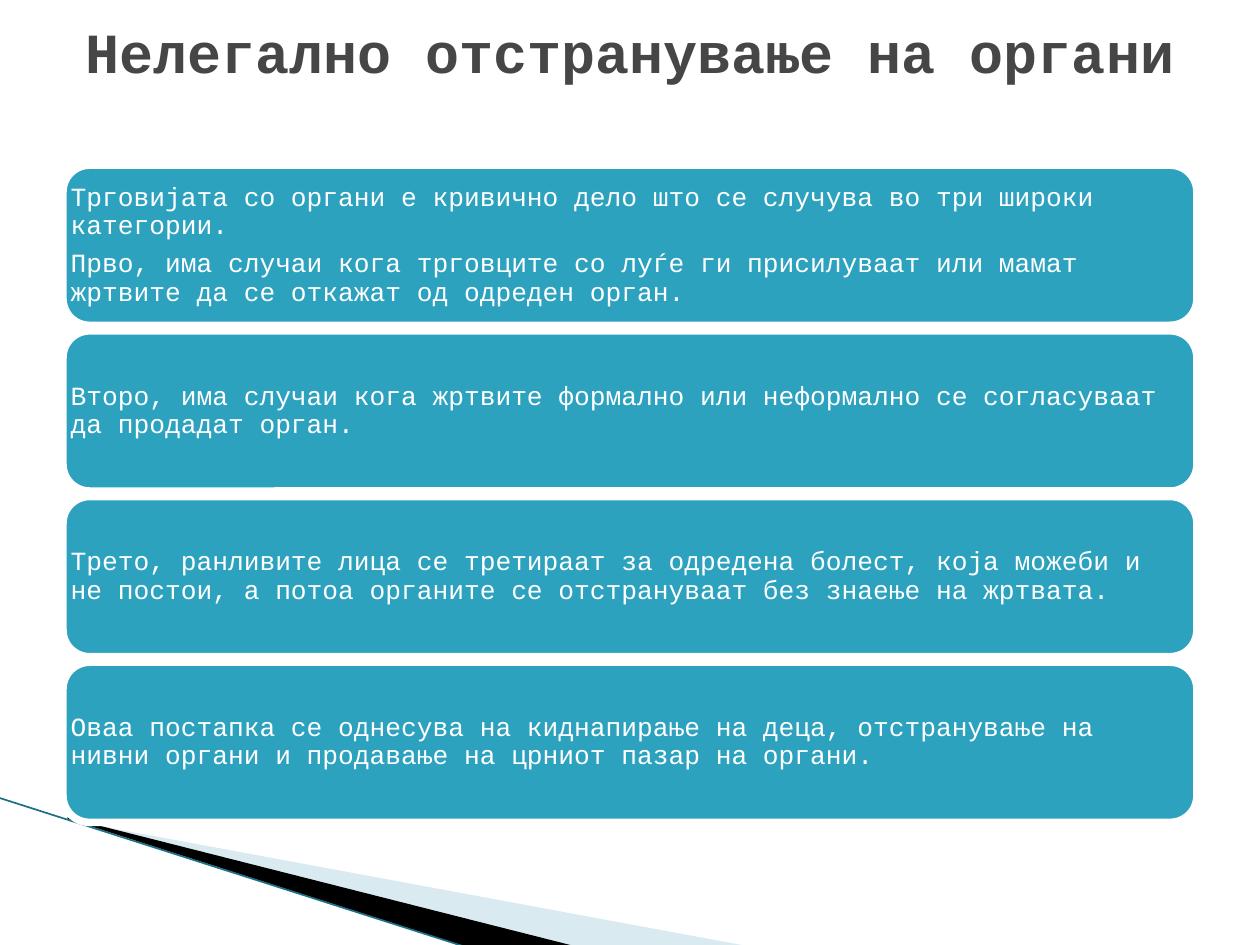
from lxml import etree
from pptx import Presentation
from pptx.dml.color import RGBColor
from pptx.enum.shapes import MSO_CONNECTOR, MSO_SHAPE
from pptx.enum.text import MSO_ANCHOR, PP_ALIGN
from pptx.oxml.ns import qn
from pptx.util import Cm, Pt

STRAIGHT = MSO_CONNECTOR.STRAIGHT
ROUNDED = MSO_SHAPE.ROUNDED_RECTANGLE
MIDDLE = MSO_ANCHOR.MIDDLE
CENTER = PP_ALIGN.CENTER
LEFT = PP_ALIGN.LEFT

COLORS = {
    "title": "464646",
    "card": "2DA2BF",
    "white": "FFFFFF",
    "light wedge": "A0CBDC",
    "dark wedge": "000000",
    "edge": "1C6F85",
}
FONT = "Courier New"

TITLE = "Нелегално отстранување на органи"
CARDS = [
    [
        "Трговијата со органи е кривично дело што се случува во три широки категории.",
        "Прво, има случаи кога трговците со луѓе ги присилуваат или мамат жртвите да се откажат од одреден орган.",
    ],
    ["Второ, има случаи кога жртвите формално или неформално се согласуваат да продадат орган."],
    [
        "Трето, ранливите лица се третираат за одредена болест, која можеби и не постои, "
        "а потоа органите се отстрануваат без знаење на жртвата."
    ],
    [
        "Оваа постапка се однесува на киднапирање на деца, отстранување на нивни органи "
        "и продавање на црниот пазар на органи."
    ],
]
WEDGES = [
    ("light wedge", 40, [(1.4, 16.54), (15.11, 19.08), (11.58, 19.08), (1.4, 16.51)]),
    ("dark wedge", 100, [(1.35, 16.48), (11.61, 19.08), (9.45, 19.1), (1.37, 16.51)]),
]
EDGE = (-0.03, 16.08, 9.42, 19.1)

MARGIN, CONTENT_WIDTH = 1.27, 22.86
TITLE_TOP, TITLE_HEIGHT = 0.25, 1.57
CARDS_TOP, CARD_HEIGHT, CARD_PITCH = 3.33, 3.23, 3.34

TITLE_FONT = {"name": FONT, "size": Pt(32.4), "bold": True}
CARD_FONT = {"name": FONT, "size": Pt(15), "bold": False}
TITLE_PARAGRAPH = {"alignment": CENTER}
CARD_PARAGRAPH = {"alignment": LEFT, "line_spacing": 0.9, "space_after": Pt(5.5)}
FRAME = {"word_wrap": True, "vertical_anchor": MIDDLE}
NO_INSETS = {"margin_left": 0, "margin_right": 0, "margin_top": 0, "margin_bottom": 0}


def color(name):
    return RGBColor.from_string(COLORS[name])


def apply(target, values):
    for name, value in values.items():
        setattr(target, name, value)


def fill_shape(shape, name):
    shape.shadow.inherit = False
    shape.fill.solid()
    shape.fill.fore_color.rgb = color(name)


def write(frame, texts, paragraph_format, font_format, color_name):
    for index, text in enumerate(texts):
        paragraph = frame.add_paragraph() if index else frame.paragraphs[0]
        paragraph.text = text
        apply(paragraph, paragraph_format)
        apply(paragraph.font, font_format)
        paragraph.font.color.rgb = color(color_name)


def add_wedge(slide, name, opacity, points):
    corners = [(Cm(x), Cm(y)) for x, y in points]
    builder = slide.shapes.build_freeform(*corners[0], scale=1)
    builder.add_line_segments(corners[1:], close=True)
    shape = builder.convert_to_shape()
    fill_shape(shape, name)
    shape.line.fill.background()
    if opacity < 100:
        fill_color = shape.fill._xPr.find(qn("a:solidFill"))[0]
        etree.SubElement(fill_color, qn("a:alpha")).set("val", str(opacity * 1000))


def add_edge(slide):
    connector = slide.shapes.add_connector(STRAIGHT, *map(Cm, EDGE))
    connector.line.color.rgb = color("edge")
    connector.line.width = Pt(0.95)
    etree.SubElement(connector._element.spPr, qn("a:effectLst"))


def add_card(slide, index, texts):
    top = CARDS_TOP + index * CARD_PITCH
    shape = slide.shapes.add_shape(
        ROUNDED, Cm(MARGIN), Cm(top), Cm(CONTENT_WIDTH), Cm(CARD_HEIGHT)
    )
    fill_shape(shape, "card")
    shape.line.color.rgb = color("white")
    shape.line.width = Pt(4.33)
    apply(shape.text_frame, FRAME | NO_INSETS)
    write(shape.text_frame, texts, CARD_PARAGRAPH, CARD_FONT, "white")


def add_title(slide):
    box = slide.shapes.add_textbox(
        Cm(MARGIN), Cm(TITLE_TOP), Cm(CONTENT_WIDTH), Cm(TITLE_HEIGHT)
    )
    apply(box.text_frame, FRAME)
    write(box.text_frame, [TITLE], TITLE_PARAGRAPH, TITLE_FONT, "title")


def main():
    presentation = Presentation()
    presentation.slide_width = Cm(25.4)
    presentation.slide_height = Cm(19.05)
    slide = presentation.slides.add_slide(presentation.slide_layouts[6])
    for wedge in WEDGES:
        add_wedge(slide, *wedge)
    add_edge(slide)
    for index, texts in enumerate(CARDS):
        add_card(slide, index, texts)
    add_title(slide)
    presentation.save("out.pptx")


if __name__ == "__main__":
    main()
